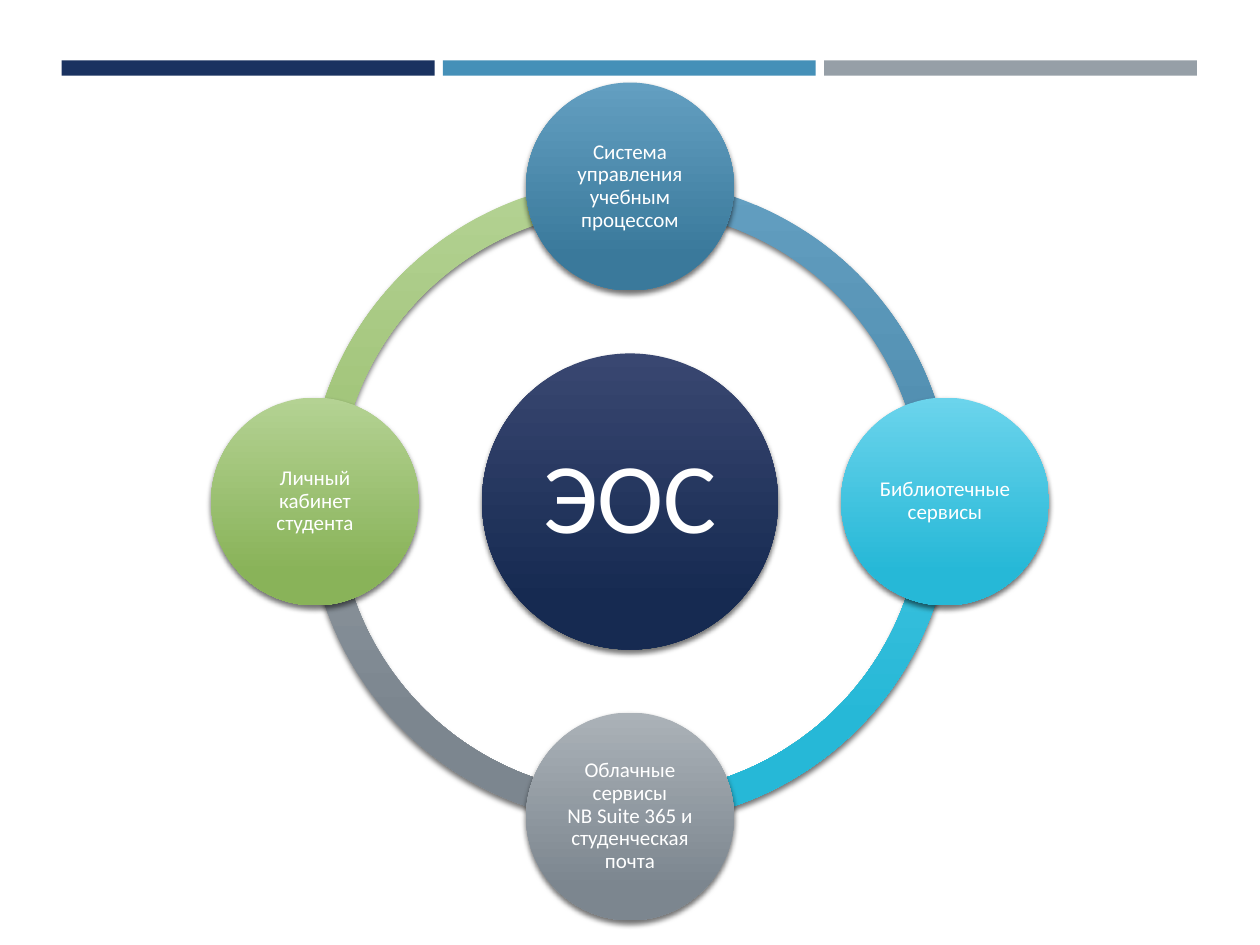
import math
from dataclasses import dataclass

from lxml import etree
from pptx import Presentation
from pptx import util as u
from pptx.dml.color import RGBColor
from pptx.enum import shapes, text
from pptx.oxml.ns import qn


@dataclass(frozen=True)
class Theme:
    font: str = "Calibri"
    white: str = "FFFFFF"
    bars: tuple = ("1A3260", "4590B8", "969FA7")
    navy: tuple = ("394771", "162A51")
    blue: tuple = ("639FC1", "3A799B")
    cyan: tuple = ("6BD4EC", "26B8D7")
    gray: tuple = ("ABB2B8", "7C868F")
    green: tuple = ("B4D293", "89B359")
    hub_size: int = 57
    node_size: int = 12


THEME = Theme()
CENTER_X, CENTER_Y = 5.0, 3.98
ORBIT = 2.5
RING, HUB, NODE = 5.11, 2.35, 1.65

# Clockwise from the top: label and gradient of each service
SERVICES = [
    ("Система управления учебным процессом", THEME.blue),
    ("Библиотечные сервисы", THEME.cyan),
    ("Облачные сервисы\nNB Suite 365 и студенческая почта", THEME.gray),
    ("Личный кабинет студента", THEME.green),
]


def write_text(shape, words, *, size, color, font, inset):
    """Write centred text into a shape; each newline is a line break."""
    frame = shape.text_frame
    frame.word_wrap = True
    frame.vertical_anchor = text.MSO_ANCHOR.MIDDLE
    frame.margin_left = frame.margin_right = u.Inches(inset)
    frame.margin_top = frame.margin_bottom = u.Inches(inset)
    para = frame.paragraphs[0]
    para.alignment = text.PP_ALIGN.CENTER
    para.line_spacing = 0.9
    for number, line in enumerate(words.split("\n")):
        if number:
            para.add_line_break()
        span = para.add_run()
        span.text = line
        span.font.name = font
        span.font.size = u.Pt(size)
        span.font.color.rgb = RGBColor.from_string(color)


class SlideBuilder:
    def __init__(self, slide, theme):
        self.slide = slide
        self.theme = theme

    def add_plain(self, kind, left, top, width, height):
        shape = self.slide.shapes.add_shape(
            kind, u.Inches(left), u.Inches(top), u.Inches(width), u.Inches(height))
        shape.shadow.inherit = False
        shape.line.fill.background()
        return shape

    def add_bar(self, left, top, width, height, color):
        bar = self.add_plain(shapes.MSO_SHAPE.RECTANGLE, left, top, width, height)
        bar.fill.solid()
        bar.fill.fore_color.rgb = RGBColor.from_string(color)

    def add_glossy(self, kind, center_x, center_y, size, colors):
        """Add a square-framed shape with a vertical gradient and a shadow."""
        shape = self.add_plain(
            kind, center_x - size / 2, center_y - size / 2, size, size)
        shape.fill.gradient()
        shape.fill.gradient_angle = 270
        for stop, place, color in zip(shape.fill.gradient_stops, (0, 0.84), colors):
            stop.position = place
            stop.color.rgb = RGBColor.from_string(color)
        effects = shape.element.spPr.find(qn("a:effectLst"))
        shadow = etree.SubElement(
            effects, qn("a:outerShdw"), blurRad=str(u.Pt(3)), dist=str(u.Pt(2)),
            dir="5400000", algn="ctr", rotWithShape="0")
        black = etree.SubElement(shadow, qn("a:srgbClr"), val="000000")
        etree.SubElement(black, qn("a:alpha"), val="55000")
        return shape

    def add_arc(self, start, colors):
        """Add a quarter of the ring, clockwise from start in degrees."""
        arc = self.add_glossy(
            shapes.MSO_SHAPE.BLOCK_ARC, CENTER_X, CENTER_Y, RING, colors)
        # Angles are stored in 60000ths of a degree, adjustments in 100000ths
        arc.adjustments[0] = start % 360 * 0.6
        arc.adjustments[1] = (start + 90) % 360 * 0.6
        arc.adjustments[2] = 0.046

    def add_circle(self, center_x, center_y, size, colors, words, points, inset):
        circle = self.add_glossy(
            shapes.MSO_SHAPE.OVAL, center_x, center_y, size, colors)
        write_text(circle, words, size=points, color=self.theme.white,
                   font=self.theme.font, inset=inset)


def main():
    deck = Presentation()
    deck.slide_width, deck.slide_height = u.Inches(10), u.Inches(7.5)
    page = SlideBuilder(deck.slides.add_slide(deck.slide_layouts[6]), THEME)

    # Header bars
    for index, color in enumerate(THEME.bars):
        page.add_bar(0.49 + 3.025 * index, 0.48, 2.96, 0.12, color)

    # Ring, one quarter for each service
    for index, (_, colors) in reversed(list(enumerate(SERVICES))):
        page.add_arc(270 + 90 * index, colors)

    # Hub
    page.add_circle(CENTER_X, CENTER_Y, HUB, THEME.navy, "ЭОС",
                    THEME.hub_size, 0.08)

    # Services around the hub
    for index, (words, colors) in enumerate(SERVICES):
        angle = math.radians(90 * index)
        page.add_circle(CENTER_X + ORBIT * math.sin(angle),
                        CENTER_Y - ORBIT * math.cos(angle),
                        NODE, colors, words, THEME.node_size, 0.02)

    deck.save("out.pptx")


if __name__ == "__main__":
    main()
